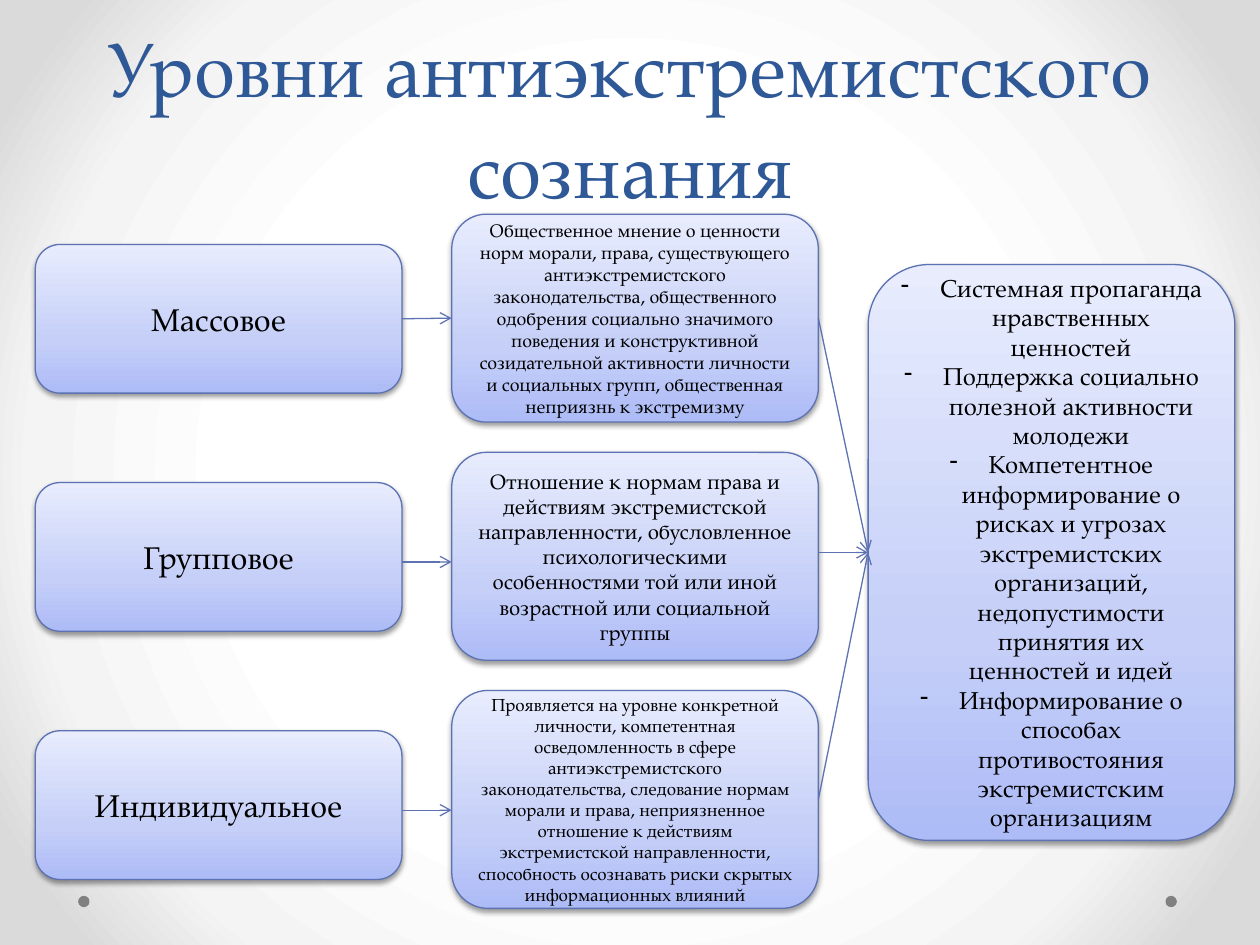
"""Build a slide on the levels of anti-extremist consciousness."""
from dataclasses import dataclass

from pptx import Presentation
from pptx.dml.color import RGBColor
from pptx.enum.shapes import MSO_CONNECTOR as Line, MSO_SHAPE as Preset
from pptx.enum.text import MSO_ANCHOR as Anchor, PP_ALIGN as Align
from pptx.oxml import parse_xml
from pptx.oxml.ns import nsdecls
from pptx.oxml.xmlchemy import OxmlElement
from pptx.shapes.autoshape import Shape
from pptx.shapes.connector import Connector
from pptx.util import Emu, Inches, Pt


@dataclass(frozen=True)
class Theme:
    """Colours, font and type sizes."""
    font: str = "TeX Gyre Pagella"
    heading: str = "2F5897"
    body: str = "000000"
    outline: str = "5C72B2"
    dot: str = "808080"
    card: tuple = ((0, "ADBBF6"), (35, "C5CFF8"), (100, "E8ECFD"))
    backdrop: tuple = ((50, "FFFFFF"), (76, "F4F4F4"), (92, "DADADA"))
    heading_size: float = 44
    heading_leading: float = 58
    level_size: float = 18
    measure_size: float = 14
    line_width: float = 0.75


@dataclass(frozen=True)
class Grid:
    """Three columns and three rows, in inches."""
    left: float = 0.28
    top: float = 1.7
    column_pitch: float = (6.89 - 0.28) / 2
    row_pitch: float = 1.89
    column_width: float = 2.91
    row_height: float = 1.65
    name_height: float = 1.18
    name_drop: float = 0.24

    def x(self, column: int) -> float:
        return self.left + column * self.column_pitch

    def y(self, row: int) -> float:
        return self.top + row * self.row_pitch


@dataclass(frozen=True)
class Level:
    """A level of consciousness, its meaning and small row adjustments."""
    name: str
    meaning: str
    meaning_size: float
    name_shift: float = 0
    extra_height: float = 0
    arrow_y: float | None = None
    outgoing_y: float | None = None


THEME, GRID = Theme(), Grid()
WIDTH, HEIGHT = 10, 7.5
SUMMARY_TOP, SUMMARY_HEIGHT = 2.1, 4.57
SUMMARY_MIDDLE = SUMMARY_TOP + SUMMARY_HEIGHT / 2
TOP, LEFT, BOTTOM, RIGHT = range(4)

LEVELS = (
    Level("Массовое",
          "Общественное мнение о ценности норм морали, права, существующего "
          "антиэкстремистского законодательства, общественного одобрения социально "
          "значимого поведения и конструктивной созидательной активности личности и "
          "социальных групп, общественная неприязнь к экстремизму", 10.5),
    Level("Групповое",
          "Отношение к нормам права и действиям экстремистской направленности, "
          "обусловленное психологическими особенностями той или иной возрастной или "
          "социальной группы", 12, arrow_y=4.46, outgoing_y=SUMMARY_MIDDLE),
    Level("Индивидуальное",
          "Проявляется на уровне конкретной личности, компетентная осведомленность в "
          "сфере антиэкстремистского законодательства, следование нормам морали и права, "
          "неприязненное отношение к действиям экстремистской направленности, способность "
          "осознавать риски скрытых информационных влияний", 10,
          name_shift=0.08, extra_height=0.08, arrow_y=6.43),
)
MEASURES = (
    "Системная пропаганда нравственных ценностей",
    "Поддержка социально полезной активности молодежи",
    "Компетентное информирование о рисках и угрозах экстремистских организаций, "
    "недопустимости принятия их ценностей и идей",
    "Информирование о способах противостояния экстремистским организациям",
)


def gradient_xml(stops: tuple, direction: str) -> str:
    """Return a gradient fill element as text."""
    marks = "".join(f'<a:gs pos="{share * 1000}"><a:srgbClr val="{color}"/></a:gs>'
                    for share, color in stops)
    return (f'<a:gradFill {nsdecls("a")} rotWithShape="1"><a:gsLst>{marks}</a:gsLst>'
            f'{direction}</a:gradFill>')


def paint_backdrop(slide) -> None:
    """Give the slide a radial gradient background."""
    direction = ('<a:path path="circle"><a:fillToRect l="50000" t="50000" '
                 'r="50000" b="50000"/></a:path>')
    slide.element.cSld.insert(0, parse_xml(
        f'<p:bg {nsdecls("p", "a")}><p:bgPr>{gradient_xml(THEME.backdrop, direction)}'
        '<a:effectLst/></p:bgPr></p:bg>'))


def write(shape: Shape, *paragraphs: str, size: float, color: str = THEME.body,
          anchor: Anchor = Anchor.MIDDLE, leading: float | None = None,
          bullet: str | None = None) -> None:
    """Fill a shape with centred paragraphs."""
    frame = shape.text_frame
    frame.word_wrap = True
    frame.vertical_anchor = anchor
    for index, words in enumerate(paragraphs):
        paragraph = frame.add_paragraph() if index else frame.paragraphs[0]
        paragraph.alignment = Align.CENTER
        if leading:
            paragraph.line_spacing = Pt(leading)
        run = paragraph.add_run()
        run.text = words
        run.font.name, run.font.size = THEME.font, Pt(size)
        run.font.color.rgb = RGBColor.from_string(color)
        if bullet:
            properties = paragraph._p.get_or_add_pPr()
            properties.set("marL", str(Inches(0.31)))
            properties.set("indent", str(-Inches(0.31)))
            mark = OxmlElement("a:buChar")
            mark.set("char", bullet)
            properties.append(mark)


def add_card(slide, column: int, top: float, height: float) -> Shape:
    """Add a rounded gradient card with a soft shadow."""
    card = slide.shapes.add_shape(
        Preset.ROUNDED_RECTANGLE, Inches(GRID.x(column)), Inches(top),
        Inches(GRID.column_width), Inches(height))
    card.line.color.rgb = RGBColor.from_string(THEME.outline)
    card.line.width = Pt(THEME.line_width)
    properties = card._element.spPr
    properties.insert(2, parse_xml(
        gradient_xml(THEME.card, '<a:lin ang="16200000" scaled="0"/>')))
    properties.append(parse_xml(
        f'<a:effectLst {nsdecls("a")}><a:outerShdw blurRad="{Pt(3.1)}" dist="{Pt(1.6)}" '
        'dir="5400000" rotWithShape="0"><a:srgbClr val="000000"><a:alpha val="38000"/>'
        '</a:srgbClr></a:outerShdw></a:effectLst>'))
    return card


def add_arrow(slide, source: Shape, target: Shape, start_y: float | None = None,
              end_y: float | None = None) -> Connector:
    """Join two cards, leaving an end free where its height is given."""
    start = Emu(source.top + source.height // 2) if start_y is None else Inches(start_y)
    end = Emu(target.top + target.height // 2) if end_y is None else Inches(end_y)
    arrow = slide.shapes.add_connector(
        Line.STRAIGHT, source.left + source.width, start, target.left, end)
    if start_y is None:
        arrow.begin_connect(source, RIGHT)
    if end_y is None:
        arrow.end_connect(target, LEFT)
    arrow.line.color.rgb = RGBColor.from_string(THEME.outline)
    arrow.line.width = Pt(THEME.line_width)
    head = OxmlElement("a:tailEnd")
    head.set("type", "arrow")
    arrow.line._get_or_add_ln().append(head)
    arrow._element.spPr.append(OxmlElement("a:effectLst"))
    return arrow


def add_dot(slide, left: float) -> None:
    """Add a small dot at the foot of the slide."""
    dot = slide.shapes.add_shape(Preset.OVAL, Inches(left), Inches(7.11),
                                 Inches(0.09), Inches(0.09))
    dot.fill.solid()
    dot.fill.fore_color.rgb = RGBColor.from_string(THEME.dot)
    dot.line.fill.background()
    dot.shadow.inherit = False


def main() -> None:
    """Compose and save the slide."""
    deck = Presentation()
    deck.slide_width, deck.slide_height = Inches(WIDTH), Inches(HEIGHT)
    slide = deck.slides.add_slide(deck.slide_layouts[6])
    paint_backdrop(slide)
    for left in (9.25, 0.62):
        add_dot(slide, left)
    heading = slide.shapes.add_textbox(Inches(0.05 * WIDTH), 0, Inches(0.9 * WIDTH), Inches(1.75))
    write(heading, "Уровни антиэкстремистского сознания", size=THEME.heading_size,
          color=THEME.heading, anchor=Anchor.BOTTOM, leading=THEME.heading_leading)
    summary = add_card(slide, 2, SUMMARY_TOP, SUMMARY_HEIGHT)
    write(summary, *MEASURES, size=THEME.measure_size, bullet="-")
    for row, level in enumerate(LEVELS):
        name = add_card(slide, 0, GRID.y(row) + GRID.name_drop + level.name_shift, GRID.name_height)
        write(name, level.name, size=THEME.level_size)
        meaning = add_card(slide, 1, GRID.y(row), GRID.row_height + level.extra_height)
        write(meaning, level.meaning, size=level.meaning_size)
        add_arrow(slide, name, meaning, level.arrow_y, level.arrow_y)
        add_arrow(slide, meaning, summary, level.outgoing_y)
    deck.save("out.pptx")


if __name__ == "__main__":
    main()
